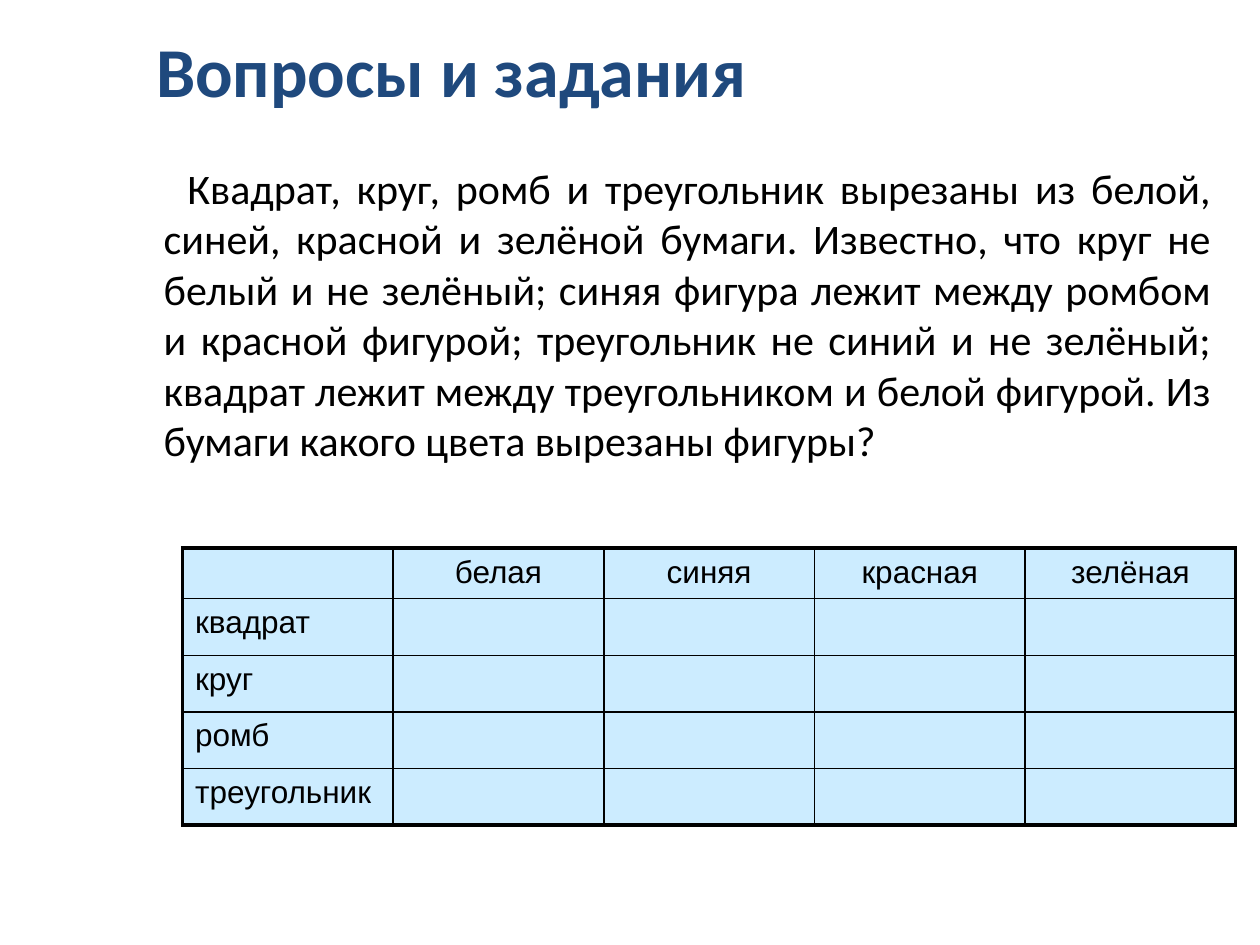
from lxml.etree import SubElement
from pptx import Presentation
from pptx.dml.color import RGBColor
from pptx.enum.text import MSO_ANCHOR as ANCHOR, MSO_AUTO_SIZE as AUTO, PP_ALIGN as ALIGN
from pptx.oxml.ns import qn
from pptx.util import Cm, Pt

COLORS = {"title": "1F497D", "text": "000000", "line": "000000", "cell": "CCECFF"}
TITLE_FONT = {"name": "Calibri", "size": Pt(40), "bold": True}
TASK_FONT = {"name": "Calibri", "size": Pt(24)}
CELL_FONT = {"name": "Arial", "size": Pt(18)}

TASK = (
    "Квадрат, круг, ромб и треугольник вырезаны из белой, синей, красной и зелёной "
    "бумаги. Известно, что круг не белый и не зелёный; синяя фигура лежит между ромбом "
    "и красной фигурой; треугольник не синий и не зелёный; квадрат лежит между "
    "треугольником и белой фигурой. Из бумаги какого цвета вырезаны фигуры?"
)
PAPERS = ["белая", "синяя", "красная", "зелёная"]
FIGURES = ["квадрат", "круг", "ромб", "треугольник"]
INNER, OUTER = 1, 2.25


def write(p, text, font, color):
    r = p.add_run()
    r.text = text
    for key, value in font.items():
        setattr(r.font, key, value)
    r.font.color.rgb = RGBColor.from_string(COLORS[color])


def add_text_frame(slide, box):
    tf = slide.shapes.add_textbox(*box).text_frame
    tf.word_wrap = True
    return tf


def add_title(slide, box):
    tf = add_text_frame(slide, box)
    tf.vertical_anchor = ANCHOR.MIDDLE
    write(tf.paragraphs[0], "Вопросы и задания", TITLE_FONT, "title")


def add_task(slide, box):
    tf = add_text_frame(slide, box)
    tf.auto_size = AUTO.SHAPE_TO_FIT_TEXT
    p = tf.paragraphs[0]
    p.alignment = ALIGN.JUSTIFY
    p._p.get_or_add_pPr().set("indent", str(Cm(0.48)))
    write(p, TASK, TASK_FONT, "text")


def set_borders(cell, widths):
    """Draw the left, right, top and bottom borders in the given point widths."""
    tcPr = cell._tc.get_or_add_tcPr()
    for side, width in zip("LRTB", widths):
        ln = SubElement(tcPr, qn(f"a:ln{side}"), w=str(Pt(width)))
        fill = SubElement(ln, qn("a:solidFill"))
        SubElement(fill, qn("a:srgbClr"), val=COLORS["line"])


def add_answer_table(slide, box):
    left, top, width, height = box
    rows = [[""] + PAPERS] + [[name] + [""] * len(PAPERS) for name in FIGURES]
    last_row, last_col = len(rows) - 1, len(PAPERS)
    table = slide.shapes.add_table(last_row + 1, last_col + 1, *box).table
    header = Cm(1.02)
    for col in table.columns:
        col.width = int(width / (last_col + 1))
    for i, row in enumerate(table.rows):
        row.height = int((height - header) / last_row) if i else header

    for i, texts in enumerate(rows):
        for j, text in enumerate(texts):
            cell = table.cell(i, j)
            edges = (j == 0, j == last_col, i == 0, i == last_row)
            set_borders(cell, [OUTER if edge else INNER for edge in edges])
            cell.fill.solid()
            cell.fill.fore_color.rgb = RGBColor.from_string(COLORS["cell"])
            if text:
                p = cell.text_frame.paragraphs[0]
                p.alignment = ALIGN.LEFT if i else ALIGN.CENTER
                write(p, text, CELL_FONT, "text")


def main():
    prs = Presentation()
    prs.slide_width, prs.slide_height = Cm(25.4), Cm(19.05)
    slide = prs.slides.add_slide(prs.slide_layouts[6])
    add_title(slide, (Cm(2.9), Cm(0.53), Cm(21.23), Cm(1.75)))
    add_task(slide, (Cm(3.05), Cm(3.15), Cm(21.62), Cm(7.37)))
    add_answer_table(slide, (Cm(3.68), Cm(11.05), Cm(21.23), Cm(5.58)))
    prs.save("out.pptx")


if __name__ == "__main__":
    main()
